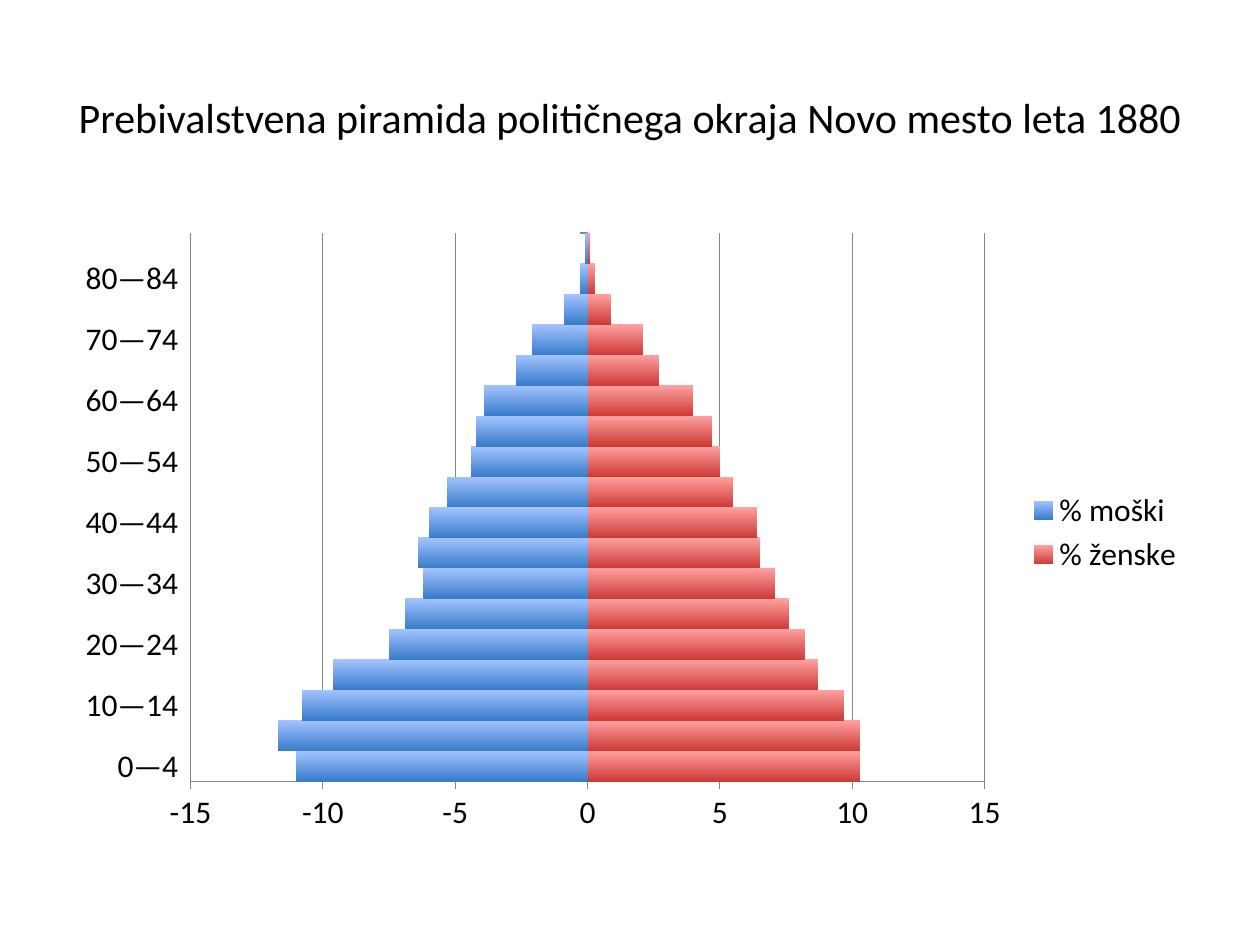
from pptx import Presentation
from pptx.chart.data import CategoryChartData
from pptx.dml.color import RGBColor
from pptx.enum.chart import XL_CHART_TYPE, XL_LEGEND_POSITION, XL_TICK_LABEL_POSITION, XL_TICK_MARK
from pptx.enum.text import MSO_ANCHOR, PP_ALIGN
from pptx.util import Inches, Pt

STACKED = XL_CHART_TYPE.BAR_STACKED
RIGHT = XL_LEGEND_POSITION.RIGHT
LOW = XL_TICK_LABEL_POSITION.LOW
OUT = XL_TICK_MARK.OUTSIDE
NONE = XL_TICK_MARK.NONE
MIDDLE = MSO_ANCHOR.MIDDLE
CENTER = PP_ALIGN.CENTER

FACE = "Calibri"
COLORS = {
    "text": "000000",
    "line": "868686",
    "men": ("A3C4FF", "3A7CCB"),
    "women": ("FFA2A1", "CE3B37"),
}
MEN = [11, 11.7, 10.8, 9.6, 7.5, 6.9, 6.2, 6.4, 6,
       5.3, 4.4, 4.2, 3.9, 2.7, 2.1, 0.9, 0.3, 0.1]
WOMEN = [10.3, 10.3, 9.7, 8.7, 8.2, 7.6, 7.1, 6.5, 6.4,
         5.5, 5, 4.7, 4, 2.7, 2.1, 0.9, 0.3, 0.1]


def rgb(code):
    return RGBColor.from_string(code)


def style(font, size):
    font.name = FACE
    font.size = Pt(size)
    font.color.rgb = rgb(COLORS["text"])


def add_title(slide, text):
    box = slide.shapes.add_textbox(Inches(0.5), Inches(0.3), Inches(9), Inches(1.25))
    frame = box.text_frame
    frame.word_wrap = True
    frame.vertical_anchor = MIDDLE
    frame.text = text
    para = frame.paragraphs[0]
    para.alignment = CENTER
    style(para.runs[0].font, 24)


def shade(series, colors):
    series.invert_if_negative = False
    fill = series.format.fill
    fill.gradient()
    fill.gradient_angle = 270
    for stop, code in zip(fill.gradient_stops, colors):
        stop.color.rgb = rgb(code)


def set_line(line):
    line.color.rgb = rgb(COLORS["line"])
    line.width = Pt(0.75)


def set_axis(axis):
    axis.major_tick_mark = OUT
    axis.minor_tick_mark = NONE
    set_line(axis.format.line)


def add_pyramid(slide):
    data = CategoryChartData(number_format="General")
    data.categories = [f"{age}—{age + 4}" for age in range(0, 85, 5)] + ["85+"]
    data.add_series("% moški", [-share for share in MEN])
    data.add_series("% ženske", WOMEN)
    chart = slide.shapes.add_chart(
        STACKED, Inches(0.5), Inches(1.75), Inches(9), Inches(4.95), data).chart
    style(chart.font, 18)
    chart.has_title = False
    chart.has_legend = True
    chart.legend.position = RIGHT
    chart.legend.include_in_layout = False

    plot = chart.plots[0]
    plot.vary_by_categories = False
    plot.gap_width = 0
    plot.overlap = 100
    for series, key in zip(plot.series, ("men", "women")):
        shade(series, COLORS[key])

    ages, shares = chart.category_axis, chart.value_axis
    set_axis(ages)
    ages.tick_label_position = LOW
    set_axis(shares)
    shares.minimum_scale, shares.maximum_scale = -15, 15
    shares.major_unit = 5
    shares.has_major_gridlines = True
    set_line(shares.major_gridlines.format.line)


def main():
    deck = Presentation()
    deck.slide_width, deck.slide_height = Inches(10), Inches(7.5)
    slide = deck.slides.add_slide(deck.slide_layouts[6])
    add_title(slide, "Prebivalstvena piramida političnega okraja Novo mesto leta 1880")
    add_pyramid(slide)
    deck.save("out.pptx")


if __name__ == "__main__":
    main()
